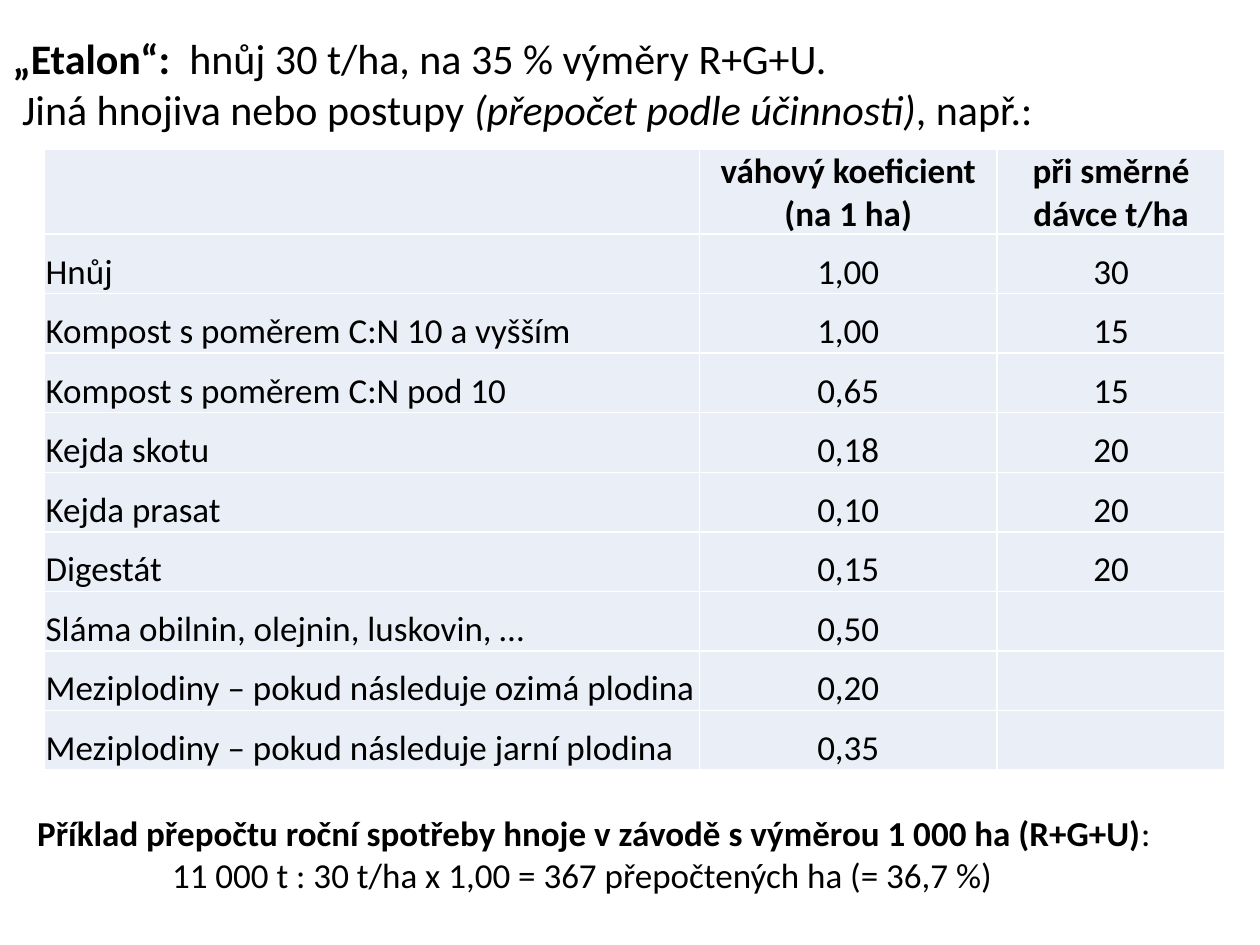
from lxml.etree import SubElement
from pptx import Presentation
from pptx.dml.color import RGBColor
from pptx.enum.text import MSO_ANCHOR as Anchor, MSO_AUTO_SIZE as Fit, PP_ALIGN as Align
from pptx.oxml.ns import qn
from pptx.util import Cm, Pt

BLACK = RGBColor(0, 0, 0)
WHITE = RGBColor(255, 255, 255)
PALE = RGBColor(0xEA, 0xEF, 0xF7)

HEAD = ["", "váhový koeficient\n(na 1 ha)", "při směrné dávce t/ha"]
ROWS = [
    ["Hnůj", "1,00", "30"],
    ["Kompost s poměrem C:N 10 a vyšším", "1,00", "15"],
    ["Kompost s poměrem C:N pod 10", "0,65", "15"],
    ["Kejda skotu", "0,18", "20"],
    ["Kejda prasat", "0,10", "20"],
    ["Digestát", "0,15", "20"],
    ["Sláma obilnin, olejnin, luskovin, …", "0,50", ""],
    ["Meziplodiny – pokud následuje ozimá plodina", "0,20", ""],
    ["Meziplodiny – pokud následuje jarní plodina", "0,35", ""],
]


def write(para, text, size=20, bold=False, italic=False, font="Calibri"):
    """Add text to a paragraph, with a line break at each newline."""
    for i, line in enumerate(text.split("\n")):
        if i:
            para.add_line_break()
        run = para.add_run()
        run.text = line
        run.font.name, run.font.size = font, Pt(size)
        run.font.bold, run.font.italic = bold, italic
        run.font.color.rgb = BLACK


class Deck:
    def __init__(self, wide, high):
        self.prs = Presentation()
        self.prs.slide_width, self.prs.slide_height = Cm(wide), Cm(high)
        self.slide = self.prs.slides.add_slide(self.prs.slide_layouts[5])

    def fill(self, shape, lines, size):
        """Each line is an indent in cm and a list of (text, format) runs."""
        frame = shape.text_frame
        frame.word_wrap = True
        frame.auto_size = Fit.SHAPE_TO_FIT_TEXT
        frame.vertical_anchor = Anchor.TOP
        for i, (indent, runs) in enumerate(lines):
            para = frame.add_paragraph() if i else frame.paragraphs[0]
            para.alignment = Align.LEFT
            para._p.get_or_add_pPr().set("marL", str(Cm(indent)))
            for text, form in runs:
                write(para, text, size=size, **form)

    def title(self, box, lines, size):
        shape = self.slide.shapes.title
        shape.left, shape.top, shape.width, shape.height = map(Cm, box)
        self.fill(shape, lines, size)

    def text(self, box, lines, size):
        self.fill(self.slide.shapes.add_textbox(*map(Cm, box)), lines, size)

    def border(self, cell):
        props = cell._tc.get_or_add_tcPr()
        for side in "LRTB":
            line = SubElement(props, qn(f"a:ln{side}"), w=str(Pt(1)))
            paint = SubElement(line, qn("a:solidFill"))
            SubElement(paint, qn("a:srgbClr"), val=str(WHITE))

    def table(self, left, top, cols, high, data):
        box = Cm(left), Cm(top), Cm(sum(cols)), Cm(sum(high))
        grid = self.slide.shapes.add_table(len(data), len(cols), *box).table
        grid.first_row = grid.horz_banding = False
        for col, width in zip(grid.columns, cols):
            col.width = Cm(width)
        for r, (row, tall) in enumerate(zip(data, high)):
            grid.rows[r].height = Cm(tall)
            for c, text in enumerate(row):
                cell = grid.cell(r, c)
                self.border(cell)
                cell.fill.solid()
                cell.fill.fore_color.rgb = PALE
                cell.margin_left = cell.margin_right = cell.margin_top = Cm(0.02)
                cell.margin_bottom = 0
                cell.vertical_anchor = Anchor.BOTTOM if r else Anchor.MIDDLE
                para = cell.text_frame.paragraphs[0]
                para.alignment = Align.CENTER if c else Align.LEFT
                write(para, text, bold=r == 0)


def main():
    deck = Deck(25.4, 19.05)

    # Heading
    deck.title((0, 0.53, 25.5, 2.31), [
        (0, [("„Etalon“: ", {"bold": True}),
             (" hnůj 30 t/ha, na 35 % výměry R+G+U.", {})]),
        (0.19, [("Jiná hnojiva nebo postupy ", {}),
                ("(přepočet podle účinnosti)", {"italic": True}),
                (", např.:", {})]),
    ], size=24)

    # Table of coefficients
    deck.table(0.9, 3, (13.2, 6, 4.6), [1.72] + [1.2] * len(ROWS), [HEAD] + ROWS)

    # Worked example
    deck.text((0.5, 16.23, 24.8, 1.96), [
        (0, [("Příklad přepočtu roční spotřeby hnoje v závodě s výměrou "
              "1 000 ha (R+G+U)", {"bold": True}), (":", {})]),
        (2.72, [("11 000 t : 30 t/ha x 1,00 = 367 přepočtených ha (= 36,7 %)", {})]),
    ], size=20)

    deck.prs.save("out.pptx")


if __name__ == "__main__":
    main()
